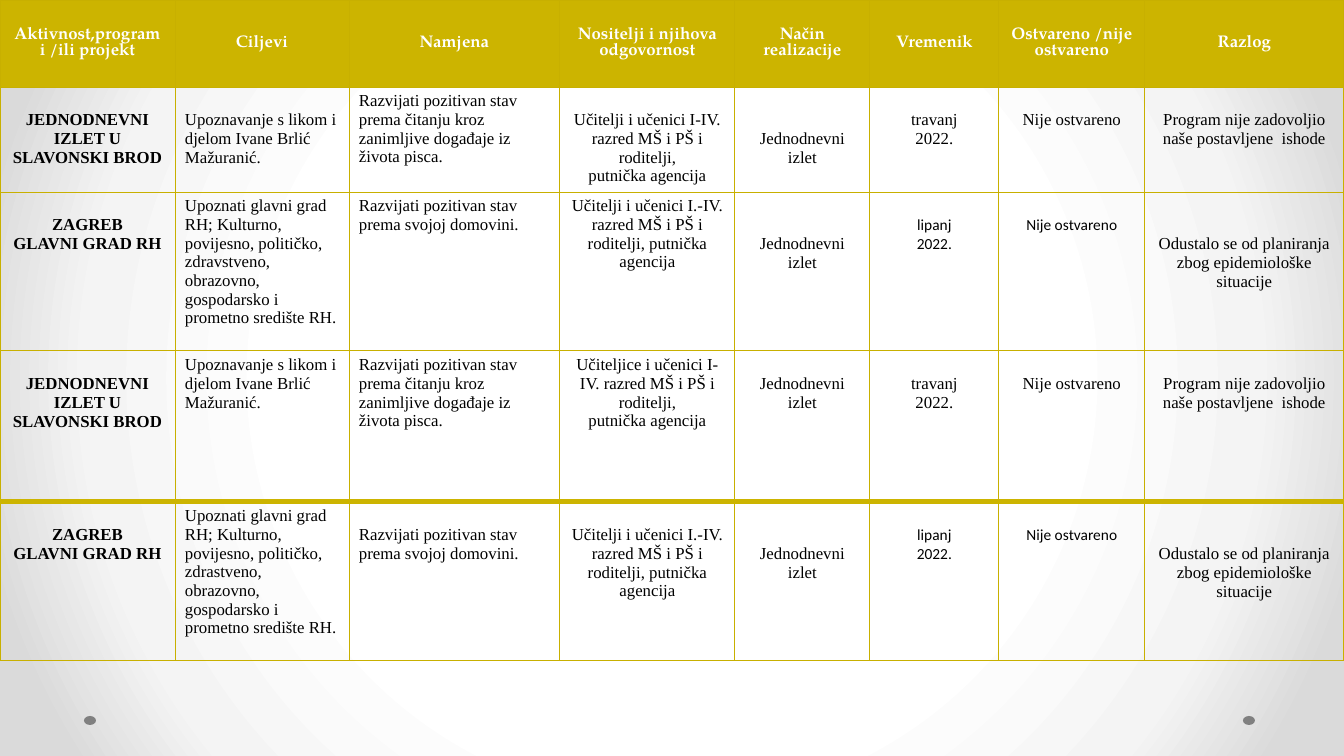
"""Builds a slide with a table of school trips, their goals and outcomes."""
from lxml import etree
from pptx import Presentation, util as u
from pptx.dml.color import RGBColor
from pptx.enum import shapes, text
from pptx.oxml import parse_xml
from pptx.oxml.ns import qn

PX = 9071
LINE = 19
C = {"gold": "CCB400", "border": "C8B000", "white": "FFFFFF", "black": "000000", "dot": "808080"}
NS = ('xmlns:a="http://schemas.openxmlformats.org/drawingml/2006/main" '
      'xmlns:p="http://schemas.openxmlformats.org/presentationml/2006/main"')
STOPS = [(50, "FFFFFF"), (76, "F4F4F4"), (92, "DADADA")]

HEADER = {"name": "TeX Gyre Pagella", "size": u.Pt(12), "bold": True}
BODY = {"name": "Times New Roman", "size": u.Pt(12), "bold": False}
TITLE = {**BODY, "bold": True}
SMALL = {"name": "Calibri", "size": u.Pt(11), "bold": False}

BROD = "JEDNODNEVNI\vIZLET U SLAVONSKI BROD"
ZAGREB = "ZAGREB\nGLAVNI GRAD RH"
IVANA = "Upoznavanje s likom i djelom Ivane Brlić Mažuranić."
GRAD = ("Upoznati glavni grad RH; Kulturno, povijesno, političko, {}, "
        "obrazovno, gospodarsko i prometno središte RH.")
READING = "Razvijati pozitivan stav prema čitanju kroz zanimljive događaje iz života pisca."
HOMELAND = "Razvijati pozitivan stav prema svojoj domovini."
STAFF = "{} i učenici {} razred MŠ i PŠ i roditelji,{}putnička agencija"
DAY = "Jednodnevni izlet"
APRIL = "travanj\v2022."
JUNE = "lipanj\n2022."
NOT_DONE = "Nije ostvareno"
OUTCOME = "Program nije zadovoljio naše postavljene  ishode"
EPIDEMIC = "Odustalo se od planiranja zbog epidemiološke situacije"

COLS = [175, 174, 211, 175, 135, 129, 146, 199]
ROWS = [87, 105, 159, 151, 159]
TABLE = [
    ["Aktivnost,program i /ili projekt", "Ciljevi", "Namjena", "Nositelji i njihova odgovornost",
     "Način realizacije", "Vremenik", "Ostvareno /nije ostvareno", "Razlog"],
    [BROD, IVANA, READING, STAFF.format("Učitelji", "I-IV.", "\v"), DAY, APRIL, NOT_DONE, OUTCOME],
    [ZAGREB, GRAD.format("zdravstveno"), HOMELAND, STAFF.format("Učitelji", "I.-IV.", " "),
     DAY, JUNE, NOT_DONE, EPIDEMIC],
    [BROD, IVANA, READING, STAFF.format("Učiteljice", "I-IV.", "\v"), DAY, APRIL, NOT_DONE, OUTCOME],
    [ZAGREB, GRAD.format("zdrastveno"), HOMELAND, STAFF.format("Učitelji", "I.-IV.", " "),
     DAY, JUNE, NOT_DONE, EPIDEMIC],
]
LINES_ABOVE = [
    [0] * 8,
    [1, 1, 0, 1, 2, 1, 1, 1],
    [1, 0, 0, 0, 2, 1, 1, 2],
    [1, 0, 0, 0, 1, 1, 1, 1],
    [1, 0, 1, 1, 2, 1, 1, 2],
]


def add_border(cell, side, color, points):
    ln = etree.SubElement(cell._tc.get_or_add_tcPr(), qn("a:" + side), w=str(u.Pt(points)))
    fill = etree.SubElement(ln, qn("a:solidFill"))
    etree.SubElement(fill, qn("a:srgbClr"), val=color)


prs = Presentation()
prs.slide_width, prs.slide_height = 1344 * PX, 756 * PX
s = prs.slides.add_slide(prs.slide_layouts[6])

stops = "".join(f'<a:gs pos="{pos * 1000}"><a:srgbClr val="{c}"/></a:gs>' for pos, c in STOPS)
s._element.cSld.insert(0, parse_xml(
    f'<p:bg {NS}><p:bgPr><a:gradFill><a:gsLst>{stops}</a:gsLst><a:path path="circle">'
    '<a:fillToRect l="50000" t="50000" r="50000" b="50000"/></a:path></a:gradFill>'
    '<a:effectLst/></p:bgPr></p:bg>'))

for x in (1243, 84):
    sp = s.shapes.add_shape(shapes.MSO_SHAPE.OVAL, x * PX, 716 * PX, 12 * PX, 9 * PX)
    sp.shadow.inherit = False
    sp.fill.solid()
    sp.fill.fore_color.rgb = RGBColor.from_string(C["dot"])
    sp.line.fill.background()

tbl = s.shapes.add_table(len(ROWS), len(COLS), 0, 0, sum(COLS) * PX, sum(ROWS) * PX).table
tbl.first_row = tbl.horz_banding = False
for col, width in zip(tbl.columns, COLS):
    col.width = width * PX
for row, height in zip(tbl.rows, ROWS):
    row.height = height * PX

for i, words in enumerate(TABLE):
    for j, word in enumerate(words):
        cell = tbl.cell(i, j)
        is_head = i == 0
        side_margin, end_margin = (4, 0) if is_head else (10, 5)
        cell.margin_left = cell.margin_right = side_margin * PX
        cell.margin_top = (end_margin + LINES_ABOVE[i][j] * LINE) * PX
        cell.margin_bottom = end_margin * PX
        cell.vertical_anchor = text.MSO_ANCHOR.MIDDLE if is_head else text.MSO_ANCHOR.TOP
        for side in ("lnL", "lnR", "lnT", "lnB"):
            is_thick = (i, side) in ((3, "lnB"), (4, "lnT"))
            add_border(cell, side, C["gold" if is_thick else "border"], 4 if is_thick else 0.75)
        if is_head:
            cell.fill.solid()
            cell.fill.fore_color.rgb = RGBColor.from_string(C["gold"])
            style = HEADER
        else:
            cell.fill.background()
            style = TITLE if j == 0 else SMALL if i in (2, 4) and j in (5, 6) else BODY
        tf = cell.text_frame
        tf.text = word
        for p in tf.paragraphs:
            is_left = not is_head and j in (1, 2)
            p.alignment = text.PP_ALIGN.LEFT if is_left else text.PP_ALIGN.CENTER
            for r in p.runs:
                for key, value in style.items():
                    setattr(r.font, key, value)
                r.font.color.rgb = RGBColor.from_string(C["white" if is_head else "black"])

prs.save("out.pptx")
